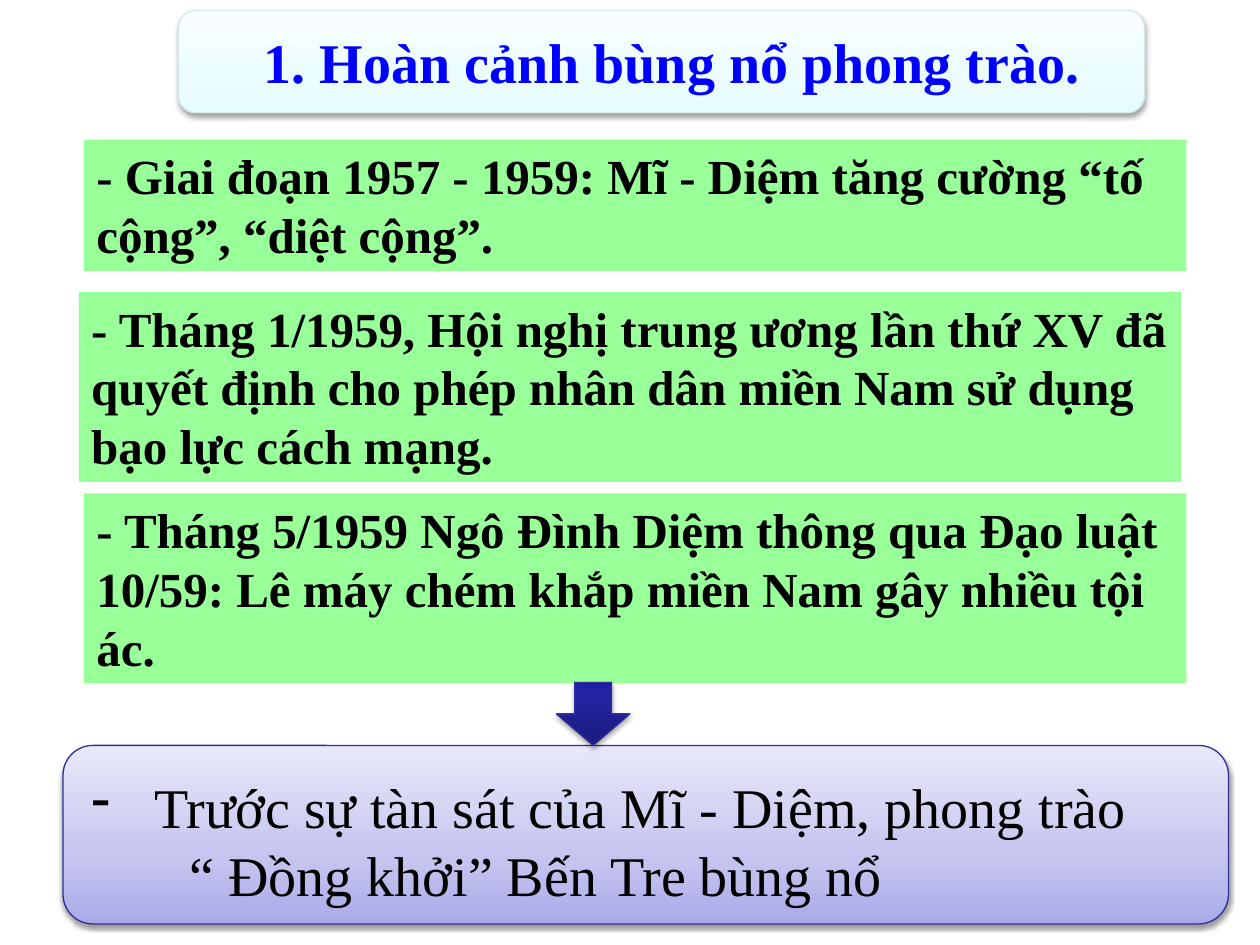
"""Build a slide on the background of an uprising, with a title, three causes and a result."""
import dataclasses
import typing

import lxml.etree
import pptx
import pptx.dml.color
import pptx.enum.shapes
import pptx.enum.text
import pptx.oxml.ns
import pptx.util

Kind = pptx.enum.shapes.MSO_SHAPE
Align = pptx.enum.text.PP_ALIGN
qn = pptx.oxml.ns.qn
COLS, ROWS = 120, 90
WIDTH, HEIGHT = pptx.util.Inches(10), pptx.util.Inches(7.5)


@dataclasses.dataclass(frozen=True)
class Theme:
    face: str = "Times New Roman"
    big: int = 32
    small: int = 28
    ink: str = "000000"
    blue: str = "0000FF"
    green: str = "99FF99"
    navy: str = "2F2F98"
    pale: str = "D5E8EA"
    shade: str = "000000"
    lilac: tuple = ((0, "A9A9E9"), (35, "C4C4EF"), (100, "E8E8FA"))
    ice: tuple = ((0, "E6FDFF"), (35, "ECFDFF"), (100, "F8FEFF"))
    deep: tuple = ((0, "1B1B7E"), (80, "2323A3"), (100, "2020A6"))


class Area(typing.NamedTuple):
    col: float
    row: float
    wide: float
    high: float


class Panel(typing.NamedTuple):
    kind: Kind
    area: Area
    stops: tuple
    edge: str
    dark: int


class Cause(typing.NamedTuple):
    area: Area
    text: str


THEME = Theme()
PANELS = (
    Panel(Kind.ROUNDED_RECTANGLE, Area(6, 71, 111, 17), THEME.lilac, THEME.navy, 38),
    Panel(Kind.ROUNDED_RECTANGLE, Area(17, 1, 92, 9.75), THEME.ice, THEME.pale, 38),
)
ARROW = Panel(Kind.DOWN_ARROW, Area(53, 65, 7, 6), THEME.deep, THEME.navy, 35)
CAUSES = (
    Cause(Area(8, 13.3, 105, 12.5),
          "- Giai đoạn 1957 - 1959: Mĩ - Diệm tăng cường “tố cộng”, “diệt cộng”."),
    Cause(Area(7.5, 27.8, 105, 18.1),
          "- Tháng 1/1959, Hội nghị trung ương lần thứ XV đã quyết định cho phép "
          "nhân dân miền Nam sử dụng bạo lực cách mạng."),
    Cause(Area(8, 47, 105, 18.1),
          "- Tháng 5/1959 Ngô Đình Diệm thông qua Đạo luật 10/59: "
          "Lê máy chém khắp miền Nam gây nhiều tội ác."),
)
TITLE = "1. Hoàn cảnh bùng nổ phong trào."
RESULT = ("Trước sự tàn sát của Mĩ - Diệm, phong trào", "“ Đồng khởi” Bến Tre bùng nổ")


def color(code: str) -> pptx.dml.color.RGBColor:
    return pptx.dml.color.RGBColor.from_string(code)


def place(area: Area) -> tuple:
    return (round(area.col * WIDTH / COLS), round(area.row * HEIGHT / ROWS),
            round(area.wide * WIDTH / COLS), round(area.high * HEIGHT / ROWS))


def move(shape, area: Area) -> None:
    shape.left, shape.top, shape.width, shape.height = place(area)


def style(para, size: int, code: str, bold: bool, align=Align.LEFT) -> None:
    para.alignment = align
    para.space_before = pptx.util.Pt(0)
    font = para.font
    font.name, font.size, font.bold = THEME.face, pptx.util.Pt(size), bold
    font.color.rgb = color(code)


def setup(frame) -> None:
    frame.word_wrap = True
    frame.auto_size = pptx.enum.text.MSO_AUTO_SIZE.NONE
    frame.vertical_anchor = pptx.enum.text.MSO_ANCHOR.TOP


def tint(parent, code: str):
    return lxml.etree.SubElement(parent, qn("a:srgbClr"), val=code)


def blend(shape, stops: tuple) -> None:
    shape.fill.gradient()
    shape.fill.gradient_angle = 90
    group = next(shape.element.iter(qn("a:gsLst")))
    for old in list(group):
        group.remove(old)
    for share, code in stops:
        tint(lxml.etree.SubElement(group, qn("a:gs"), pos=str(share * 1000)), code)


def cast(shape, dark: int) -> None:
    shape.shadow.inherit = False
    effect = next(shape.element.iter(qn("a:effectLst")))
    outer = lxml.etree.SubElement(
        effect, qn("a:outerShdw"), blurRad=str(pptx.util.Pt(3.1)),
        dist=str(pptx.util.Pt(1.7)), dir="5400000", rotWithShape="0")
    lxml.etree.SubElement(tint(outer, THEME.shade), qn("a:alpha"), val=str(dark * 1000))


def draw_panel(slide, panel: Panel) -> None:
    shape = slide.shapes.add_shape(panel.kind, *place(panel.area))
    blend(shape, panel.stops)
    shape.line.color.rgb = color(panel.edge)
    shape.line.width = pptx.util.Pt(0.75)
    cast(shape, panel.dark)


def draw_title(slide) -> None:
    title = slide.shapes.title
    slide.shapes.element.append(title.element)
    move(title, Area(18, 2, 92, 7.7))
    setup(title.text_frame)
    title.text_frame.text = TITLE
    style(title.text_frame.paragraphs[0], THEME.big, THEME.blue, True, Align.CENTER)


def indent(para, left: float, first: float, mark: str) -> None:
    props = para._p.get_or_add_pPr()
    props.set("marL", str(pptx.util.Inches(left)))
    props.set("indent", str(pptx.util.Inches(first)))
    if mark:
        lxml.etree.SubElement(props, qn("a:buFontTx"))
        lxml.etree.SubElement(props, qn("a:buChar"), char=mark)
    else:
        lxml.etree.SubElement(props, qn("a:buNone"))


def draw_result(slide) -> None:
    body = slide.placeholders[1]
    slide.shapes.element.append(body.element)
    move(body, Area(7.5, 73, 108, 20.15))
    setup(body.text_frame)
    body.text_frame.text = "\n".join(RESULT)
    lead, tail = body.text_frame.paragraphs
    indent(lead, 0.5, -0.5, "-")
    indent(tail, 0.78, 0, "")
    for para in (lead, tail):
        style(para, THEME.big, THEME.ink, False)


def draw_cause(slide, cause: Cause) -> None:
    shape = slide.shapes.add_shape(Kind.RECTANGLE, *place(cause.area))
    shape.fill.solid()
    shape.fill.fore_color.rgb = color(THEME.green)
    shape.line.fill.background()
    shape.shadow.inherit = False
    setup(shape.text_frame)
    shape.text_frame.text = cause.text
    style(shape.text_frame.paragraphs[0], THEME.small, THEME.ink, True)


def main() -> None:
    deck = pptx.Presentation()
    deck.slide_width, deck.slide_height = WIDTH, HEIGHT
    slide = deck.slides.add_slide(deck.slide_layouts[1])
    for panel in PANELS:
        draw_panel(slide, panel)
    draw_title(slide)
    draw_result(slide)
    for cause in CAUSES:
        draw_cause(slide, cause)
    draw_panel(slide, ARROW)
    deck.save("out.pptx")


if __name__ == "__main__":
    main()
